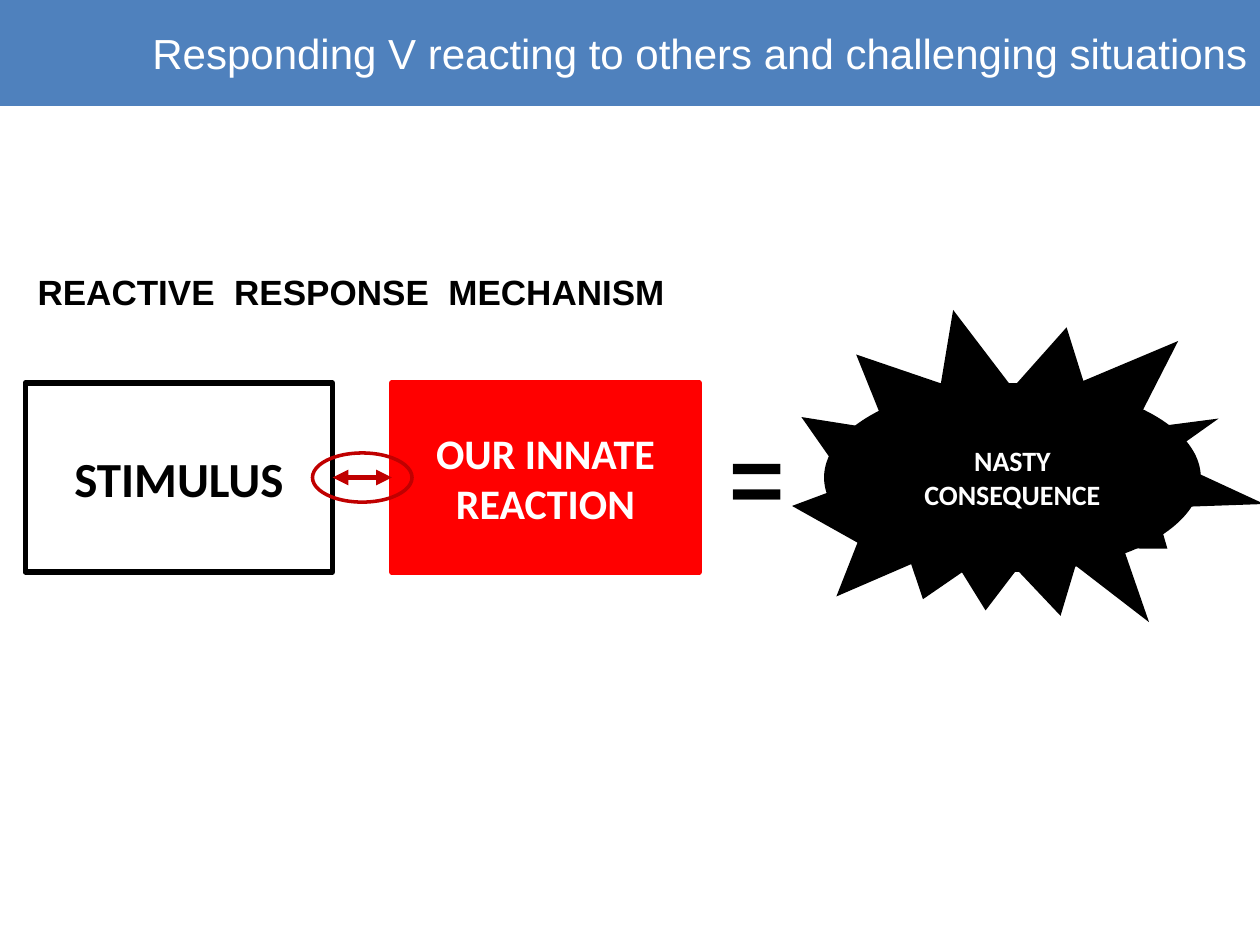
from lxml import etree
from pptx import Presentation
from pptx.dml.color import RGBColor
from pptx.enum.shapes import MSO_CONNECTOR, MSO_SHAPE
from pptx.enum.text import MSO_ANCHOR, PP_ALIGN
from pptx.oxml.ns import qn
from pptx.util import Inches, Pt

RECT, OVAL, BURST = MSO_SHAPE.RECTANGLE, MSO_SHAPE.OVAL, MSO_SHAPE.EXPLOSION2
LEFT, CENTER, RIGHT = PP_ALIGN.LEFT, PP_ALIGN.CENTER, PP_ALIGN.RIGHT
MIDDLE, TOP = MSO_ANCHOR.MIDDLE, MSO_ANCHOR.TOP

COLORS = {"banner": "4F81BD", "white": "FFFFFF", "black": "000000",
          "red": "FF0000", "arrow": "C00000"}

TITLE = "Responding V reacting to others and challenging situations"
HEADING = "REACTIVE  RESPONSE  MECHANISM"
STAGES = [  # text, size, text colour, fill, outline
    ("STIMULUS", 28, "black", "white", "black"),
    ("OUR INNATE REACTION", 24, "white", "red", "red"),
]
RESULT = "NASTY CONSEQUENCE"

WIDTH, HEIGHT = 10, 7.5
MARGIN, ROW_TOP = 0.2, 3.04
BOX_WIDTH, BOX_HEIGHT, GAP = 2.44, 1.5, 0.47
ROW_MIDDLE = ROW_TOP + BOX_HEIGHT / 2


def color(name):
    return RGBColor.from_string(COLORS[name])


def write(shape, text, align, anchor=MIDDLE, wrap=True, **font):
    frame = shape.text_frame
    frame.word_wrap, frame.vertical_anchor = wrap, anchor
    para = frame.paragraphs[0]
    para.alignment = align
    span = para.add_run()
    span.text = text
    span.font.color.rgb = color(font.pop("ink"))
    for name, value in font.items():
        setattr(span.font, name, value)


def paint(shape, fill=None, line=None, weight=3):
    if fill:
        shape.fill.solid()
        shape.fill.fore_color.rgb = color(fill)
    else:
        shape.fill.background()
    if line:
        shape.line.color.rgb = color(line)
        shape.line.width = Pt(weight)
    else:
        shape.line.fill.background()


def add_shape(parent, kind, area, **style):
    shape = parent.add_shape(kind, *map(Inches, area))
    shape.shadow.inherit = False
    paint(shape, **style)
    return shape


def add_label(shapes, area, text, size):
    box = shapes.add_textbox(*map(Inches, area))
    write(box, text, LEFT, TOP, False, ink="black", size=Pt(size), name="Arial", bold=True)


def add_double_arrow(parent, start, end):
    arrow = parent.add_connector(MSO_CONNECTOR.STRAIGHT, Inches(start), Inches(ROW_MIDDLE),
                                 Inches(end), Inches(ROW_MIDDLE))
    arrow.line.color.rgb = color("arrow")
    arrow.line.width = Pt(3)
    for tag in ("a:headEnd", "a:tailEnd"):
        etree.SubElement(arrow.line._get_or_add_ln(), qn(tag), type="triangle")
    etree.SubElement(arrow._element.spPr, qn("a:effectLst"))


def main():
    deck = Presentation()
    deck.slide_width, deck.slide_height = Inches(WIDTH), Inches(HEIGHT)
    page = deck.slides.add_slide(deck.slide_layouts[5])
    shapes = page.shapes

    banner = shapes.title
    banner.left, banner.top, banner.width, banner.height = map(Inches, (0, 0, WIDTH, 0.84))
    paint(banner, "banner")
    write(banner, TITLE, RIGHT, ink="white", size=Pt(24), name="Arial")

    for column, (text, size, ink, fill, line) in enumerate(STAGES):
        left = MARGIN + column * (BOX_WIDTH + GAP)
        box = add_shape(shapes, RECT, (left, ROW_TOP, BOX_WIDTH, BOX_HEIGHT),
                        fill=fill, line=line)
        write(box, text, CENTER, ink=ink, size=Pt(size), name="Calibri", bold=True)

    add_label(shapes, (5.69, 3.28, 0.64, 1.01), "=", 54)

    outcome = shapes.add_group_shape().shapes
    burst = add_shape(outcome, BURST, (6.32, 2.31, 3.64, 2.95), fill="black")
    burst.rotation = 23.8
    core = add_shape(outcome, OVAL, (6.54, ROW_TOP, 2.99, BOX_HEIGHT), fill="black")
    write(core, RESULT, CENTER, ink="white", size=Pt(16), name="Calibri", bold=True)

    add_label(shapes, (MARGIN, 2.1, 5.23, 0.44), HEADING, 20)

    link = shapes.add_group_shape().shapes
    gap_left = MARGIN + BOX_WIDTH
    add_double_arrow(link, gap_left + GAP, gap_left)
    ring_width, ring_height = 0.79, 0.39
    add_shape(link, OVAL, (gap_left + (GAP - ring_width) / 2, ROW_MIDDLE - ring_height / 2,
                           ring_width, ring_height), line="arrow", weight=2)

    deck.save("out.pptx")


if __name__ == "__main__":
    main()
